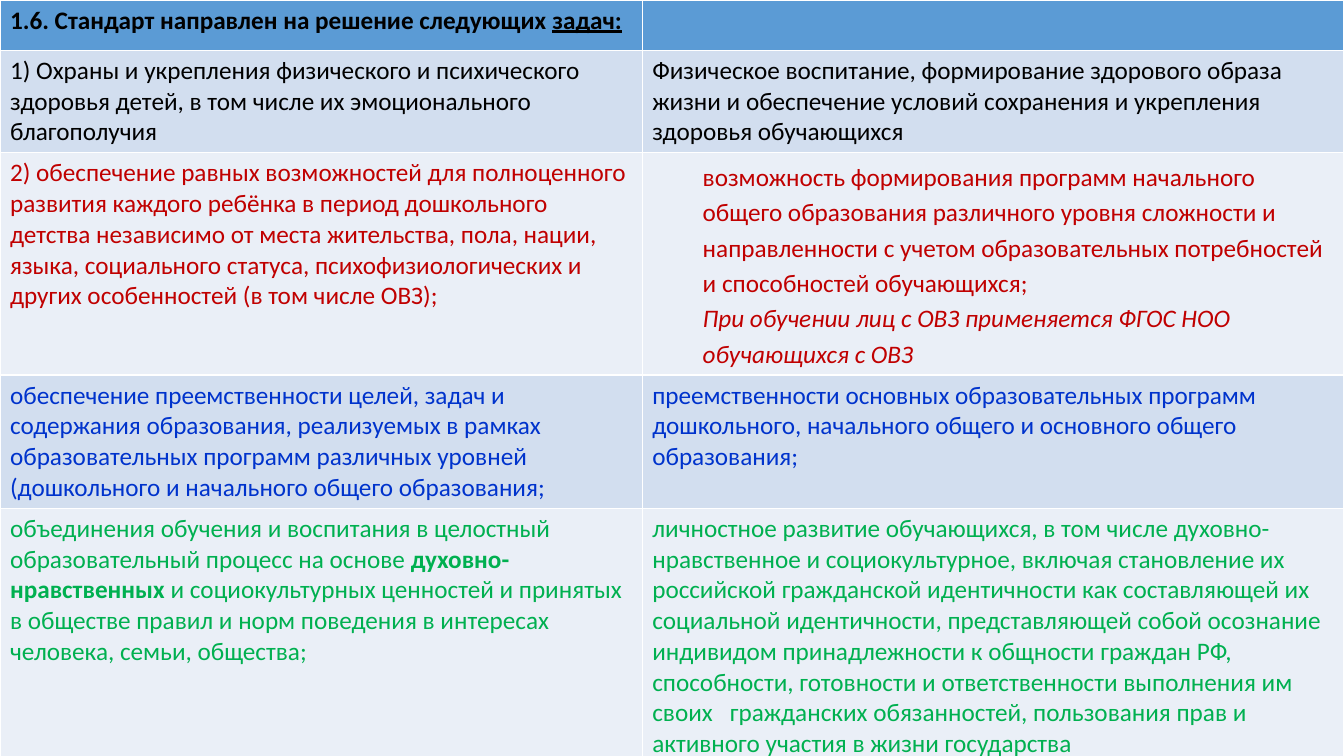
"""Build a slide comparing the aims of two education standards in a table."""
from pptx import Presentation
from pptx.dml.color import RGBColor as Rgb
from pptx.util import Inches, Pt

THEME = {
    "font": "Calibri", "size": 18,
    "head": "5B9BD5", "bands": ("D2DEEF", "EAEFF7"),
    "black": "000000", "red": "C00000", "blue": "0033CC", "green": "00B050",
}
SIZE = (13.33, 7.5)
COLS = (6.37, 6.96)

# Each row: height, text colour, cells; a cell lists paragraphs of (text, style) runs.
ROWS = [
    (0.5, "black", [
        [[("1.6. Стандарт направлен на решение следующих ", "b"), ("задач:", "bu")]],
        [],
    ]),
    (1, "black", [
        [[("1) Охраны и укрепления физического и психического здоровья детей, "
           "в том числе их эмоционального благополучия", "")]],
        [[("Физическое воспитание, формирование здорового образа жизни и "
           "обеспечение условий сохранения и укрепления здоровья обучающихся", "")]],
    ]),
    (2.18, "red", [
        [[("2) обеспечение равных возможностей для полноценного развития каждого "
           "ребёнка в период дошкольного детства независимо от места жительства, "
           "пола, нации, языка, социального статуса, психофизиологических и других "
           "особенностей (в том числе ОВЗ);", "")]],
        [[("возможность формирования программ начального общего образования "
           "различного уровня сложности и направленности с учетом образовательных "
           "потребностей и способностей обучающихся;", "")],
         [("При обучении лиц с ОВЗ применяется ФГОС НОО обучающихся с ОВЗ", "i")]],
    ]),
    (1.3, "blue", [
        [[("обеспечение преемственности целей, задач и содержания образования, "
           "реализуемых в рамках образовательных программ различных уровней "
           "(дошкольного и начального общего образования;", "")]],
        [[("преемственности основных образовательных программ дошкольного, "
           "начального общего и основного общего образования;", "")]],
    ]),
    (2.49, "green", [
        [[("объединения обучения и воспитания в целостный образовательный процесс "
           "на основе ", ""), ("духовно-нравственных ", "b"),
          ("и социокультурных ценностей и принятых в обществе правил и норм "
           "поведения в интересах человека, семьи, общества;", "")]],
        [[("личностное развитие обучающихся, в том числе духовно-нравственное и "
           "социокультурное, включая становление их российской гражданской "
           "идентичности как составляющей их социальной идентичности, "
           "представляющей собой осознание индивидом принадлежности к общности "
           "граждан РФ, способности, готовности и ответственности выполнения им "
           "своих   гражданских обязанностей, пользования прав и активного участия "
           "в жизни государства", "")]],
    ]),
]
INDENT = {(2, 1): (0.5, 1.15)}


def fill_cell(cell, paras, tone, back, indent):
    cell.fill.solid()
    cell.fill.fore_color.rgb = Rgb.from_string(back)
    frame = cell.text_frame
    for i, runs in enumerate(paras):
        para = frame.add_paragraph() if i else frame.paragraphs[0]
        font = para.font
        font.name, font.size = THEME["font"], Pt(THEME["size"])
        font.color.rgb = Rgb.from_string(THEME[tone])
        if indent:
            left, para.line_spacing = indent
            para._p.get_or_add_pPr().set("marL", str(Inches(left)))
        for text, style in runs:
            run = para.add_run()
            run.text = text
            run.font.bold = "b" in style
            run.font.italic = "i" in style
            run.font.underline = "u" in style


def main():
    deck = Presentation()
    deck.slide_width, deck.slide_height = map(Inches, SIZE)
    slide = deck.slides.add_slide(deck.slide_layouts[6])
    high = sum(row[0] for row in ROWS)
    table = slide.shapes.add_table(
        len(ROWS), len(COLS), 0, 0, Inches(sum(COLS)), Inches(high)).table
    for col, width in zip(table.columns, COLS):
        col.width = Inches(width)
    for r, (height, tone, cells) in enumerate(ROWS):
        table.rows[r].height = Inches(height)
        back = THEME["bands"][(r - 1) % 2] if r else THEME["head"]
        for c, paras in enumerate(cells):
            fill_cell(table.cell(r, c), paras, tone, back, INDENT.get((r, c)))
    deck.save("out.pptx")


if __name__ == "__main__":
    main()
